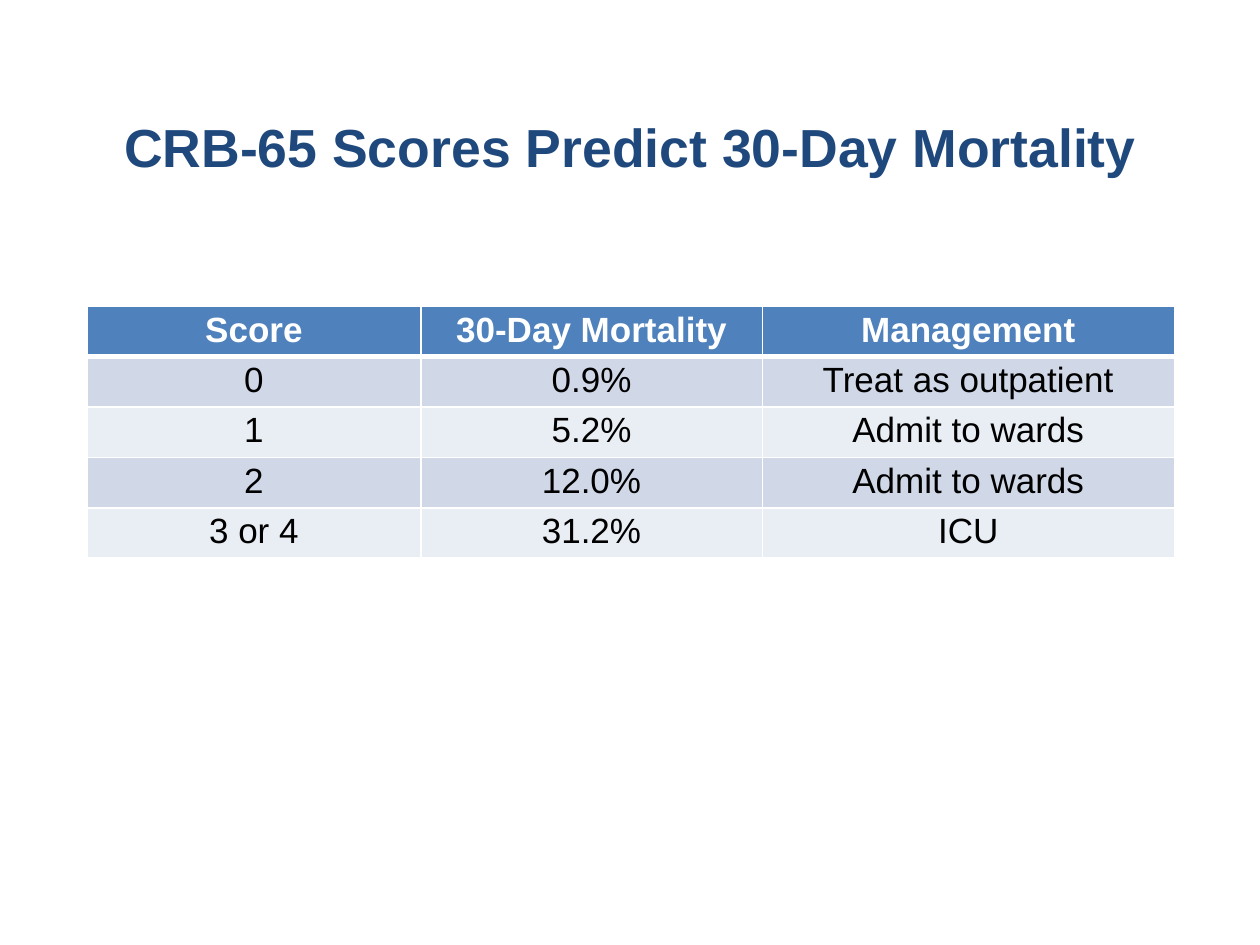
from lxml.etree import SubElement
from pptx import Presentation
from pptx.dml.color import RGBColor as RGB
from pptx.enum.text import MSO_ANCHOR as Anchor, PP_ALIGN as Align
from pptx.oxml.ns import qn
from pptx.util import Inches, Pt

WIDTH, HEIGHT = Inches(10), Inches(7.5)
COLORS = {
    "title": "1F497D",
    "header": "4F81BD",
    "header_text": "FFFFFF",
    "body_text": "000000",
    "band_dark": "D0D8E8",
    "band_light": "E9EDF4",
    "border": "FFFFFF",
}
SCORES = [
    ("Score", "30-Day Mortality", "Management"),
    ("0", "0.9%", "Treat as outpatient"),
    ("1", "5.2%", "Admit to wards"),
    ("2", "12.0%", "Admit to wards"),
    ("3 or 4", "31.2%", "ICU"),
]
COLUMN_WIDTHS = (2.65, 2.71, 3.27)
ROW_HEIGHT = 0.38


def write(frame, text, color, size, bold):
    paragraph = frame.paragraphs[0]
    paragraph.text = text
    paragraph.alignment = Align.CENTER
    font = paragraph.runs[0].font
    for name, value in {"name": "Arial", "size": Pt(size), "bold": bold}.items():
        setattr(font, name, value)
    font.color.rgb = RGB.from_string(COLORS[color])


def add_title(slide, text):
    box = slide.shapes.add_textbox(
        int(WIDTH * 0.05), int(HEIGHT * 0.11), int(WIDTH * 0.9), int(HEIGHT * 0.09))
    frame = box.text_frame
    frame.word_wrap = True
    frame.vertical_anchor = Anchor.MIDDLE
    write(frame, text, "title", 30.6, True)


def add_borders(cell, widths):
    properties = cell._tc.get_or_add_tcPr()
    for side, width in widths.items():
        line = SubElement(properties, qn(f"a:ln{side}"), w=str(Pt(width)))
        fill = SubElement(line, qn("a:solidFill"))
        SubElement(fill, qn("a:srgbClr"), val=COLORS["border"])


def format_cell(cell, text, row):
    # The header is set off by a thicker rule
    add_borders(cell, {"L": 1, "R": 1, "T": 3 if row == 1 else 1, "B": 3 if row == 0 else 1})
    margins = {"margin_left": Inches(0.1), "margin_right": Inches(0.1),
               "margin_top": Pt(2.4), "margin_bottom": Pt(2.4)}
    for name, value in margins.items():
        setattr(cell, name, value)
    is_header = row == 0
    band = "header" if is_header else "band_dark" if row % 2 else "band_light"
    cell.fill.solid()
    cell.fill.fore_color.rgb = RGB.from_string(COLORS[band])
    write(cell.text_frame, text, "header_text" if is_header else "body_text", 20, is_header)


def add_score_table(slide, scores):
    table = slide.shapes.add_table(
        len(scores), len(COLUMN_WIDTHS), Inches(0.69), Inches(2.43),
        Inches(sum(COLUMN_WIDTHS)), Inches(ROW_HEIGHT * len(scores))).table
    for column, width in zip(table.columns, COLUMN_WIDTHS):
        column.width = Inches(width)
    for row, texts in enumerate(scores):
        for column, text in enumerate(texts):
            format_cell(table.cell(row, column), text, row)


def main():
    deck = Presentation()
    deck.slide_width, deck.slide_height = WIDTH, HEIGHT
    slide = deck.slides.add_slide(deck.slide_layouts[6])

    # Heading
    add_title(slide, "CRB-65 Scores Predict 30-Day Mortality")
    # Mortality and management by score
    add_score_table(slide, SCORES)

    deck.save("out.pptx")


if __name__ == "__main__":
    main()
